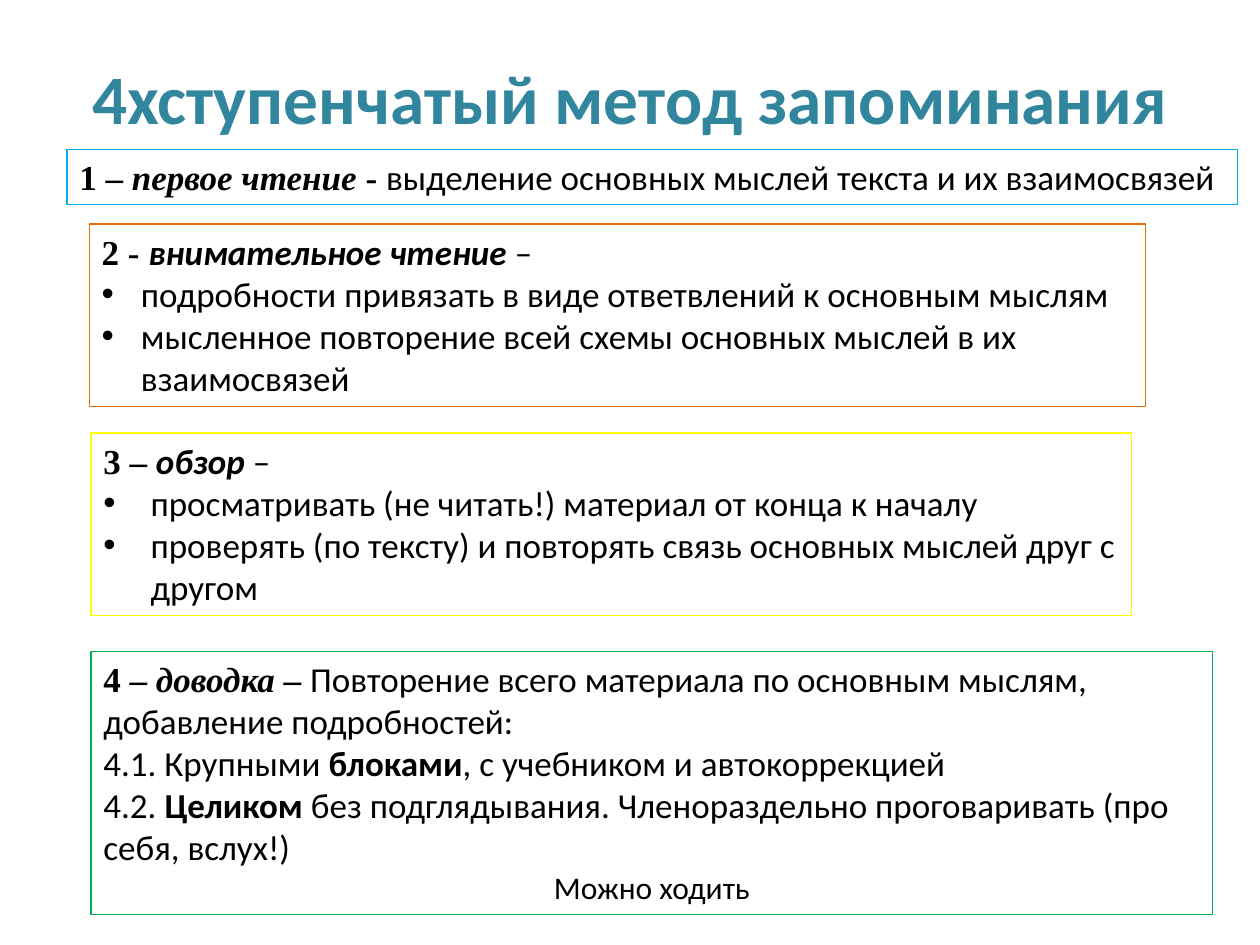
"""Build a slide on the four-step memorisation method."""
from lxml.etree import SubElement
from pptx import Presentation
from pptx.dml.color import RGBColor
from pptx.enum.text import MSO_ANCHOR, MSO_AUTO_SIZE, PP_ALIGN
from pptx.oxml.ns import qn
from pptx.util import Pt

TEAL = RGBColor(0x31, 0x85, 0x9C)
BLACK = RGBColor(0, 0, 0)
BLUE = RGBColor(0x00, 0xB0, 0xF0)
ORANGE = RGBColor(0xE4, 0x6C, 0x0A)
YELLOW = RGBColor(0xFF, 0xFF, 0x00)
GREEN = RGBColor(0x00, 0xB0, 0x50)

SANS, SERIF = "Calibri", "Times New Roman"
STYLES = {
    "number": (SERIF, True, False),
    "serif term": (SERIF, True, True),
    "sans term": (SANS, True, True),
    "strong": (SANS, True, False),
    "plain": (SANS, False, False),
}

TITLE = "4хступенчатый метод запоминания"
STEPS = [
    {"box": (38.2, 85.4, 669, 31.5), "color": BLUE, "wrap": False, "paragraphs": [
        ("text", [("1 – ", "number"), ("первое чтение ", "serif term"), ("- ", "number"),
                  ("выделение основных мыслей текста и их взаимосвязей", "plain")])]},
    {"box": (51, 128, 603.5, 104.3), "color": ORANGE, "indent": 22.5, "paragraphs": [
        ("text", [("2 - ", "number"), ("внимательное чтение ", "sans term"), ("–", "plain")]),
        ("bullet", [("подробности привязать в виде ответвлений к основным мыслям", "plain")]),
        ("bullet", [("мысленное повторение всей схемы основных мыслей в их взаимосвязей",
                     "plain")])]},
    {"box": (52, 247.5, 594.7, 104.3), "color": YELLOW, "indent": 27, "paragraphs": [
        ("text", [("3 – ", "number"), ("обзор", "sans term"), (" –", "plain")]),
        ("bullet", [("просматривать (не читать!) материал от конца к началу", "plain")]),
        ("bullet", [("проверять (по тексту) и повторять связь основных мыслей друг с другом",
                     "plain")])]},
    {"box": (52, 372.4, 641, 150.2), "color": GREEN, "paragraphs": [
        ("text", [("4 – ", "number"), ("доводка", "serif term"), (" – ", "number"),
                  ("Повторение всего материала по основным мыслям, добавление подробностей:",
                   "plain")]),
        ("text", [("4.1. Крупными ", "plain"), ("блоками", "strong"),
                  (", с учебником и автокоррекцией", "plain")]),
        ("text", [("4.2. ", "plain"), ("Целиком ", "strong"),
                  ("без подглядывания. Членораздельно проговаривать (про себя, вслух!)",
                   "plain")]),
        ("note", [("Можно ходить", "plain")])]},
]


def add_run(paragraph, text, style, size, color):
    run = paragraph.add_run()
    run.text = text
    run.font.name, run.font.bold, run.font.italic = STYLES[style]
    run.font.size = Pt(size)
    run.font.color.rgb = color


def add_bullet(paragraph, indent):
    properties = paragraph._p.get_or_add_pPr()
    properties.set("marL", str(Pt(indent)))
    properties.set("indent", str(-Pt(indent)))
    SubElement(properties, qn("a:buFont")).set("typeface", "Arial")
    SubElement(properties, qn("a:buChar")).set("char", "•")


def add_step(slide, step):
    panel = slide.shapes.add_textbox(*map(Pt, step["box"]))
    panel.line.color.rgb = step["color"]
    panel.line.width = Pt(0.75)
    frame = panel.text_frame
    frame.word_wrap = step.get("wrap", True)
    frame.auto_size = MSO_AUTO_SIZE.SHAPE_TO_FIT_TEXT
    for index, (kind, runs) in enumerate(step["paragraphs"]):
        paragraph = frame.add_paragraph() if index else frame.paragraphs[0]
        if kind == "bullet":
            add_bullet(paragraph, step["indent"])
        paragraph.alignment = PP_ALIGN.CENTER if kind == "note" else PP_ALIGN.LEFT
        for text, style in runs:
            add_run(paragraph, text, style, 18 if kind == "note" else 20, BLACK)


def main():
    deck = Presentation()
    deck.slide_width, deck.slide_height = Pt(720), Pt(540)
    slide = deck.slides.add_slide(deck.slide_layouts[5])

    title = slide.shapes.title
    title.left, title.top, title.width, title.height = map(Pt, (36, 21.6, 648, 67))
    title.text_frame.vertical_anchor = MSO_ANCHOR.MIDDLE
    heading = title.text_frame.paragraphs[0]
    heading.alignment = PP_ALIGN.CENTER
    add_run(heading, TITLE, "strong", 39.6, TEAL)

    for step in STEPS:
        add_step(slide, step)
    deck.save("out.pptx")


if __name__ == "__main__":
    main()
